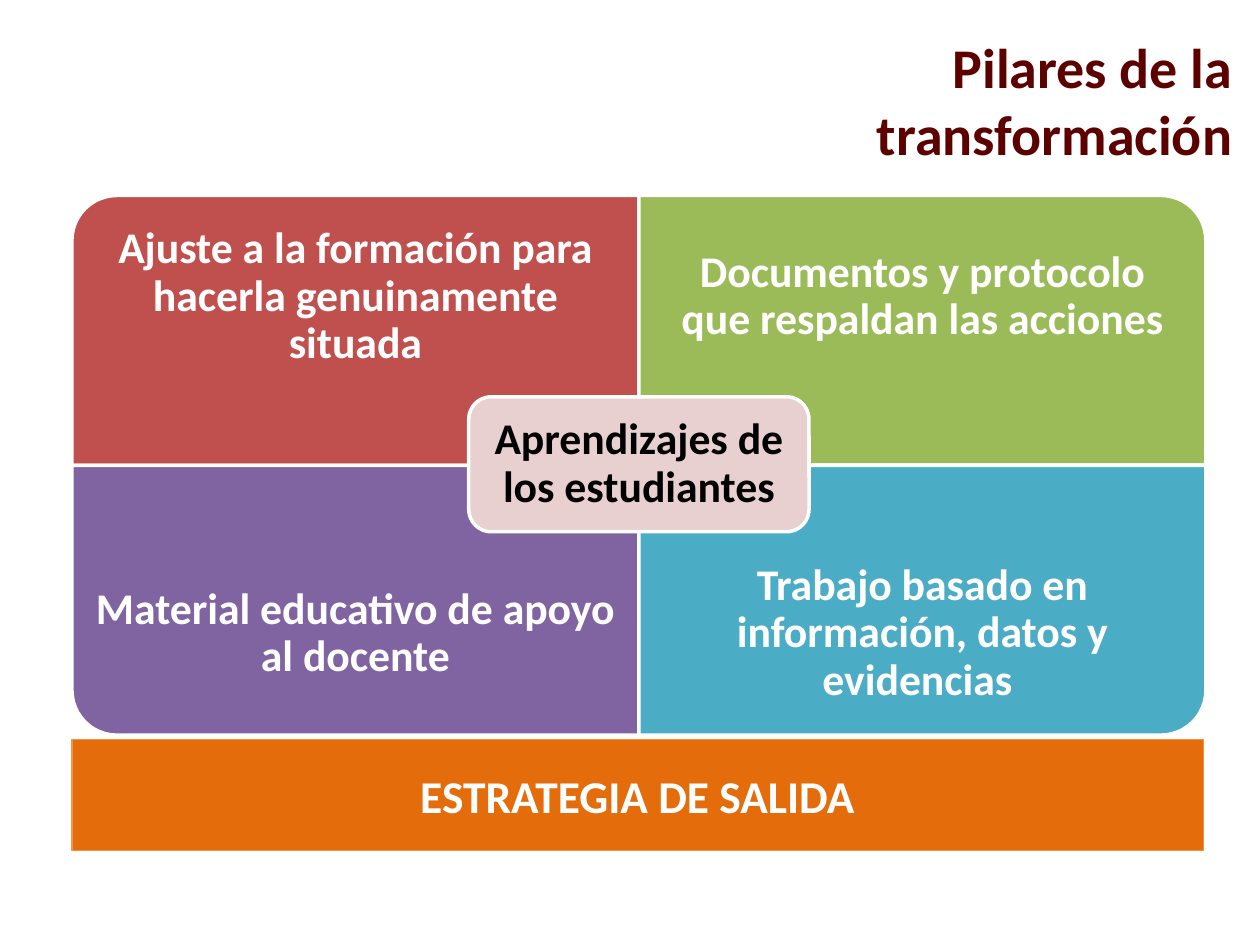
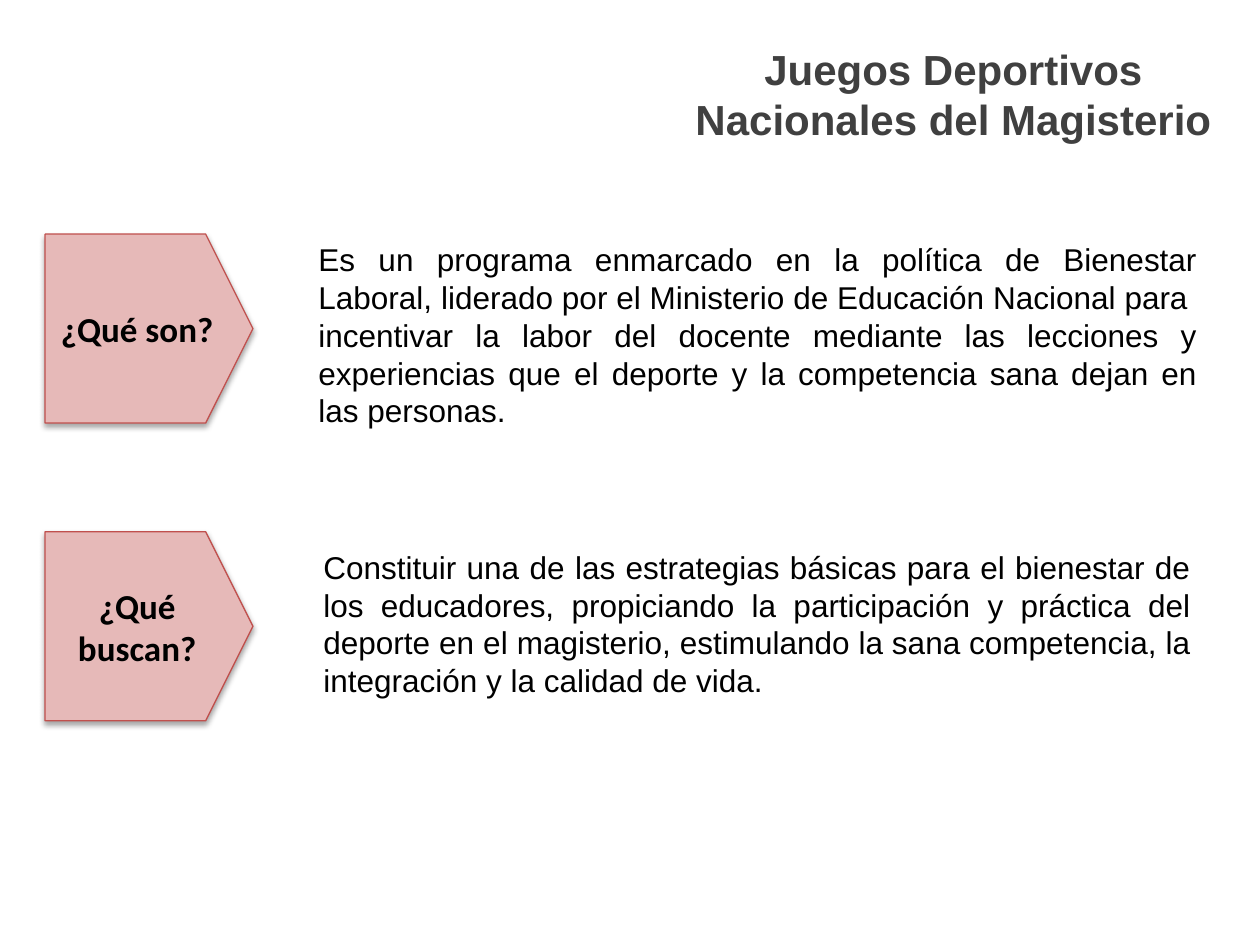
from pptx import Presentation
from pptx.dml.color import RGBColor
from pptx.enum.shapes import MSO_SHAPE
from pptx.enum.text import MSO_ANCHOR, MSO_AUTO_SIZE, PP_ALIGN
from pptx.util import Cm, Pt

WHITE = RGBColor(0xFF, 0xFF, 0xFF)
BLACK = RGBColor(0, 0, 0)
MAROON = RGBColor(0x5C, 0, 0)
GREY = RGBColor(0x40, 0x40, 0x40)
RED = RGBColor(0xC0, 0x50, 0x4D)
GREEN = RGBColor(0x9B, 0xBB, 0x59)
PURPLE = RGBColor(0x80, 0x64, 0xA2)
BLUE = RGBColor(0x4B, 0xAC, 0xC6)
BLUSH = RGBColor(0xE8, 0xD0, 0xD0)
PINK = RGBColor(0xE6, 0xB9, 0xB8)
ORANGE = RGBColor(0xE4, 0x6C, 0x0A)
LIGHT_ORANGE = RGBColor(0xF6, 0x92, 0x40)

GRID_LEFT, GRID_TOP = 1.45, 3.94
CELL_W, CELL_H, CELL_TEXT_H = 11.43, 5.44, 4.09

QUADRANTS = [
    ("Ajuste a la formación para hacerla genuinamente situada", RED, 270),
    ("Documentos y protocolo que respaldan las acciones", GREEN, 0),
    ("Material educativo de apoyo al docente", PURPLE, 180),
    ("Trabajo basado en información, datos y evidencias ", BLUE, 90),
]
QUE_SON = [
    "Es un programa enmarcado en la política de Bienestar Laboral, liderado por "
    "el Ministerio de Educación Nacional para ",
    "incentivar la labor del docente mediante las lecciones y experiencias que "
    "el deporte y la competencia sana dejan en las personas.",
]
QUE_BUSCAN = [
    "Constituir una de las estrategias básicas para el bienestar de los "
    "educadores, propiciando la participación y práctica del deporte en el "
    "magisterio, estimulando la sana competencia, la integración y la calidad "
    "de vida.",
]


def write(s, lines, size, color, font="Calibri", bold=True,
          align=PP_ALIGN.CENTER, anchor=MSO_ANCHOR.MIDDLE, spacing=1.0):
    """Write one paragraph, with a line break between its lines."""
    tf = s.text_frame
    tf.word_wrap = True
    tf.auto_size = MSO_AUTO_SIZE.NONE
    tf.vertical_anchor = anchor
    p = tf.paragraphs[0]
    p.alignment = align
    p.line_spacing = spacing
    for i, line in enumerate(lines):
        if i:
            p.add_line_break()
        r = p.add_run()
        r.text = line
        r.font.name = font
        r.font.size = Pt(size)
        r.font.bold = bold
        r.font.color.rgb = color


def add_title(slide, text, box, size, color, font, align):
    """Place and fill the slide title."""
    s = slide.shapes.title
    s.left, s.top, s.width, s.height = [Cm(v) for v in box]
    write(s, [text], size, color, font, align=align, anchor=MSO_ANCHOR.TOP)


def add_block(slide, kind, box, fill, line, width, shadow=False):
    """Add a filled and outlined shape."""
    s = slide.shapes.add_shape(kind, *[Cm(v) for v in box])
    s.fill.solid()
    s.fill.fore_color.rgb = fill
    s.line.color.rgb = line
    s.line.width = Pt(width)
    if not shadow:
        s.shadow.inherit = False
    return s


def add_label(slide, text, box, inset, color):
    """Add a centred label over a block."""
    s = slide.shapes.add_textbox(*[Cm(v) for v in box])
    tf = s.text_frame
    tf.margin_left = tf.margin_right = Cm(inset)
    tf.margin_top = tf.margin_bottom = Cm(inset)
    write(s, [text], 25, color, spacing=0.9)


def add_quadrant(slide, index, text, fill, rotation):
    """Add one cell of the two by two grid, its outer corner rounded."""
    row, col = divmod(index, 2)
    left, top = GRID_LEFT + col * CELL_W, GRID_TOP + row * CELL_H
    w, h = (CELL_H, CELL_W) if rotation % 180 else (CELL_W, CELL_H)
    box = (left + (CELL_W - w) / 2, top + (CELL_H - h) / 2, w, h)
    s = add_block(slide, MSO_SHAPE.ROUND_1_RECTANGLE, box, fill, WHITE, 2)
    s.rotation = rotation
    text_top = top + row * (CELL_H - CELL_TEXT_H)
    add_label(slide, text, (left, text_top, CELL_W, CELL_TEXT_H), 0.48, WHITE)


def add_question(slide, question, top, answer, box):
    """Add an arrow-shaped question and its justified answer."""
    s = add_block(slide, MSO_SHAPE.PENTAGON, (0.91, top, 4.19, 3.81),
                  PINK, RED, 0.75, shadow=True)
    s.adjustments[0] = 0.25
    write(s, [question], 20, BLACK)
    s = slide.shapes.add_textbox(*[Cm(v) for v in box])
    write(s, answer, 18, BLACK, "Arial", False, PP_ALIGN.JUSTIFY, MSO_ANCHOR.TOP)


def build_pillars(slide):
    """Build the slide with the four pillars."""
    add_title(slide, "Pilares de la transformación", (14.71, 0.53, 10.39, 2.79),
              32, MAROON, "Calibri", PP_ALIGN.RIGHT)
    for i, (text, fill, rotation) in enumerate(QUADRANTS):
        add_quadrant(slide, i, text, fill, rotation)
    add_block(slide, MSO_SHAPE.ROUNDED_RECTANGLE, (9.45, 8.0, 6.86, 2.72),
              BLUSH, WHITE, 2)
    add_label(slide, "Aprendizajes de los estudiantes", (9.58, 8.13, 6.6, 2.46),
              0.25, BLACK)
    s = add_block(slide, MSO_SHAPE.RECTANGLE, (GRID_LEFT, 14.91, 22.81, 2.24),
                  ORANGE, LIGHT_ORANGE, 0.75)
    write(s, ["ESTRATEGIA DE SALIDA"], 26, WHITE)


def build_games(slide):
    """Build the slide about the teachers' games."""
    add_title(slide, "Juegos Deportivos Nacionales del Magisterio",
              (13.49, 0.74, 11.46, 2.57), 24, GREY, "Arial", PP_ALIGN.CENTER)
    add_question(slide, "¿Qué son?", 4.72, QUE_SON, (6.17, 4.72, 18.21, 4.11))
    add_question(slide, "¿Qué buscan?", 10.72, QUE_BUSCAN,
                 (6.27, 10.92, 17.98, 3.33))


def main():
    """Build and save the presentation."""
    prs = Presentation()
    prs.slide_width, prs.slide_height = Cm(25.4), Cm(19.05)
    for build in (build_pillars, build_games):
        build(prs.slides.add_slide(prs.slide_layouts[5]))
    prs.save("out.pptx")


if __name__ == "__main__":
    main()
